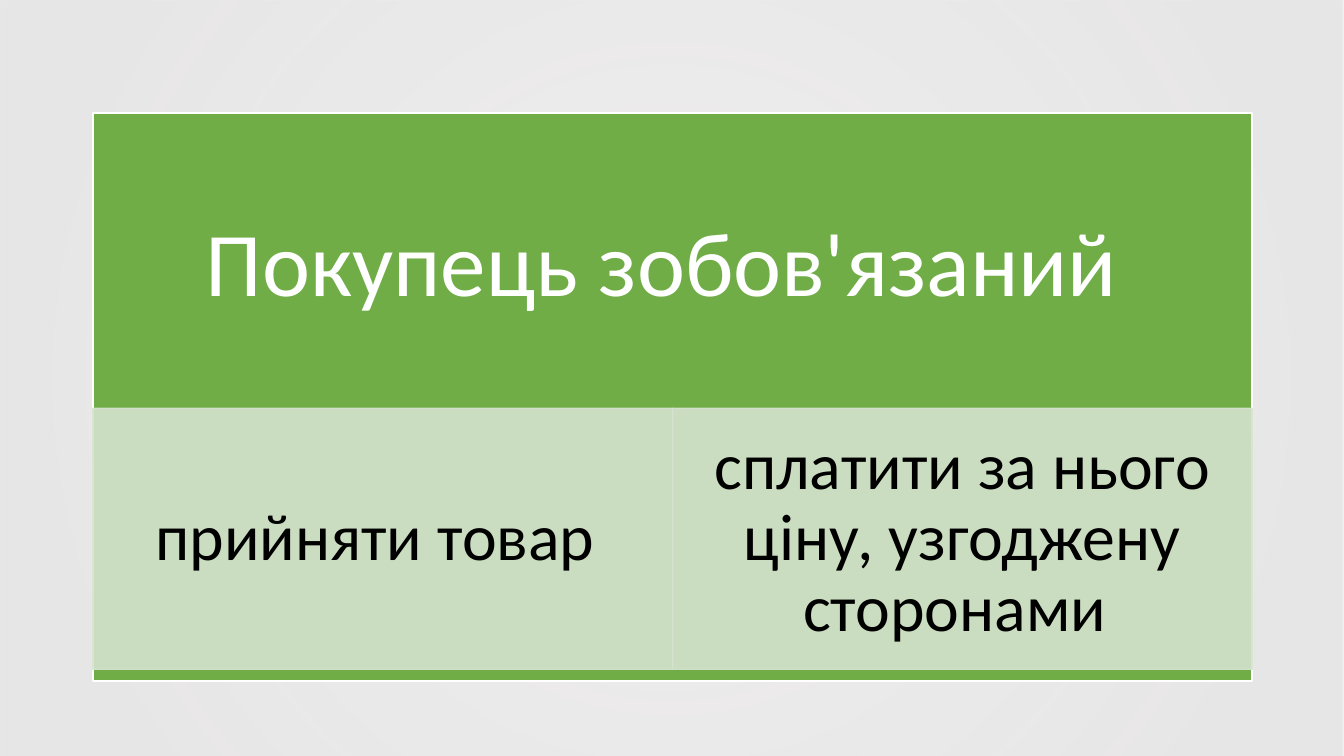
from lxml.etree import SubElement as Sub
from pptx import Presentation
from pptx.dml.color import RGBColor
from pptx.enum.shapes import MSO_SHAPE as Shape
from pptx.enum.text import MSO_ANCHOR as Anchor, PP_ALIGN as Align
from pptx.oxml import parse_xml
from pptx.oxml.ns import nsdecls, qn
from pptx.util import Inches, Pt

WHITE = RGBColor(0xFF, 0xFF, 0xFF)
BLACK = RGBColor(0, 0, 0)
GREEN = RGBColor(0x70, 0xAD, 0x47)
PALE = RGBColor(0xD5, 0xE3, 0xCF)
GREY = RGBColor(0xE7, 0xE6, 0xE6)
FONT = "Calibri"
TITLE = "Покупець зобов'язаний "
DUTIES = ["прийняти товар ", "сплатити за нього ціну, узгоджену сторонами "]


def add_rect(slide, box, fill, line, width, alpha=100):
    """Add a filled and outlined rectangle."""
    rect = slide.shapes.add_shape(Shape.RECTANGLE, *map(Inches, box))
    rect.shadow.inherit = False
    rect.fill.solid()
    rect.fill.fore_color.rgb = fill
    rect.line.color.rgb = line
    rect.line.width = Pt(width)
    if alpha < 100:
        for color in rect._element.spPr.iter(qn("a:srgbClr")):
            Sub(color, qn("a:alpha"), val=str(alpha * 1000))
    return rect


def set_text(shape, text, size, color, side, edge):
    """Put one centred paragraph into a shape."""
    frame = shape.text_frame
    frame.word_wrap = True
    frame.vertical_anchor = Anchor.MIDDLE
    frame.margin_left = frame.margin_right = Inches(side)
    frame.margin_top = frame.margin_bottom = Inches(edge)
    para = frame.paragraphs[0]
    para.text = text
    para.alignment = Align.CENTER
    para.line_spacing = 0.9
    para.font.name = FONT
    para.font.size = Pt(size)
    para.font.color.rgb = color


def add_back(slide, box):
    """Cover the box with a translucent radial gradient."""
    back = slide.shapes.add_shape(Shape.RECTANGLE, *map(Inches, box))
    back.shadow.inherit = False
    back.line.fill.background()
    back.fill.background()
    stops = "".join(
        f'<a:gs pos="{pos * 1000}"><a:srgbClr val="{GREY}">'
        f'<a:alpha val="{alpha * 1000}"/></a:srgbClr></a:gs>'
        for pos, alpha in [(10, 68), (85, 97)]
    )
    grad = parse_xml(
        f'<a:gradFill {nsdecls("a")} rotWithShape="1"><a:gsLst>{stops}</a:gsLst>'
        '<a:path path="circle"><a:fillToRect l="50000" t="50000" r="50000" b="50000"/>'
        "</a:path></a:gradFill>"
    )
    props = back._element.spPr
    props.replace(props.find(qn("a:noFill")), grad)


def add_panel(slide, box):
    """Draw the green panel with its title and a row of duties."""
    left, top, width, height = box
    add_rect(slide, box, GREEN, WHITE, 1.5)
    title = slide.shapes.add_textbox(*map(Inches, (left, top, width, 3.05)))
    set_text(title, TITLE, 65, WHITE, 0.51, 0.51)
    cell = width / len(DUTIES)
    for i, duty in enumerate(DUTIES):
        place = (left + i * cell, top + 2.93, cell, 2.59)
        rect = add_rect(slide, place, PALE, PALE, 1, 90)
        set_text(rect, duty, 47, BLACK, 0.37, 0.07)


def main():
    """Build and save the slide."""
    deck = Presentation()
    deck.slide_width, deck.slide_height = Inches(13.33), Inches(7.5)
    slide = deck.slides.add_slide(deck.slide_layouts[6])
    add_back(slide, (0, 0, 13.33, 7.5))
    add_panel(slide, (0.92, 1.12, 11.5, 5.64))
    deck.save("out.pptx")


if __name__ == "__main__":
    main()
